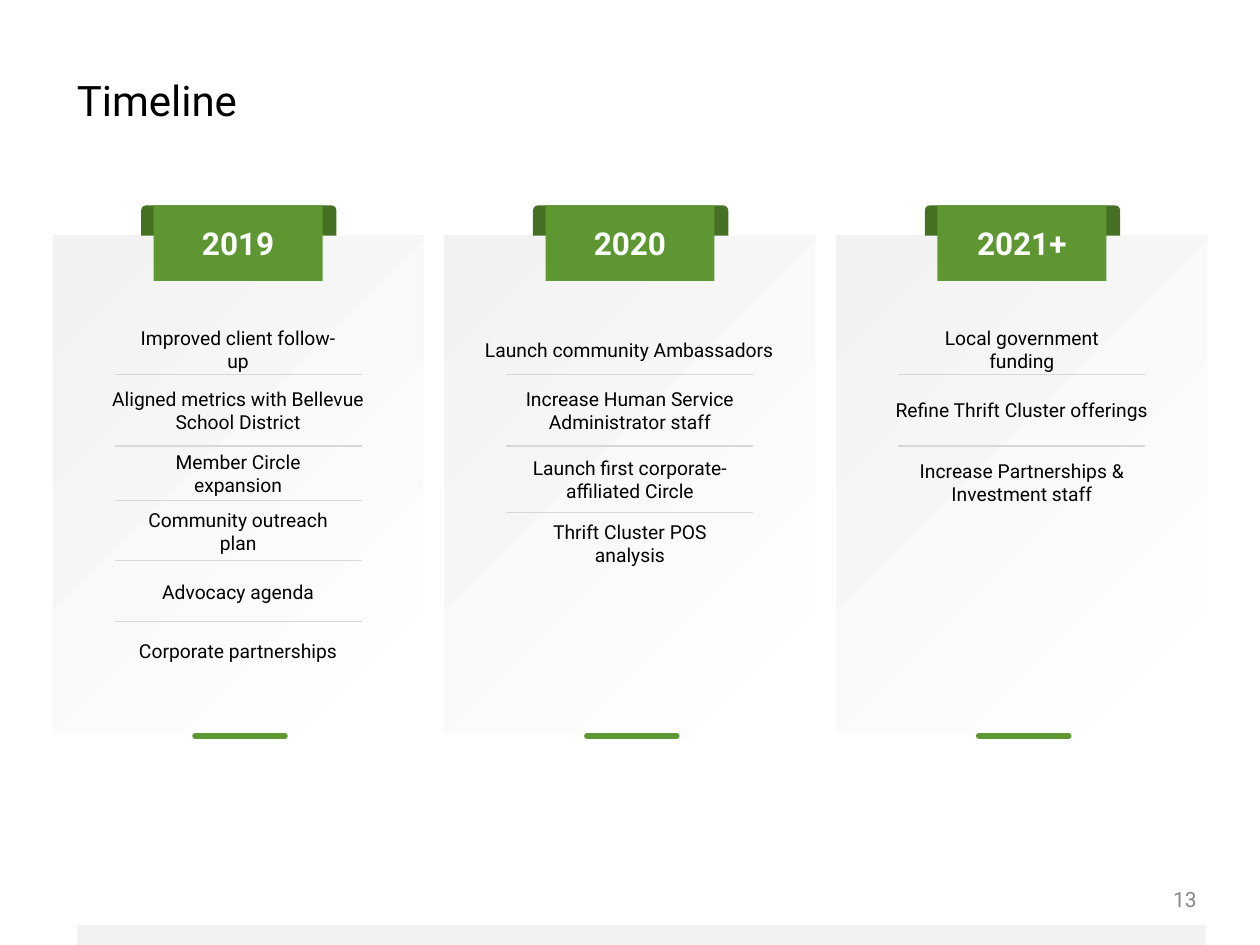
from pptx import Presentation
from pptx.dml.color import RGBColor as Rgb
from pptx.enum.shapes import MSO_CONNECTOR as Link, MSO_SHAPE as Kind
from pptx.enum.text import MSO_ANCHOR as Anchor, MSO_AUTO_SIZE as Fit, PP_ALIGN as Align
from pptx.oxml.ns import qn
from pptx.util import Pt
from lxml.etree import SubElement as Sub

PX = 9144
THEME = {
    "font": "Roboto",
    "ink": "000000", "white": "FFFFFF", "grey": "888888",
    "pale": "F2F2F2", "rule": "D8D8D8",
    "green": "5E9732", "dark": "467125",
    "title": 24, "year": 18, "num": 12, "item": 11,
    "thin": 0.75, "thick": 3.5,
}
STEP = 311
PLANS = [
    ("2019", [
        ("Improved client follow-up", 168, 105, 19),
        ("Aligned metrics with Bellevue School District", 204, 144, 37),
        ("Member Circle expansion", 168, 203, 19),
        ("Community outreach plan", 168, 249, 19),
        ("Advocacy agenda", 168, 297, 19),
        ("Corporate partnerships", 168, 344, 19),
    ], [134, 191, 234, 282, 330]),
    ("2020", [
        ("Launch community Ambassadors", 241, 105, 19),
        ("Increase Human Service Administrator staff", 204, 144, 37),
        ("Launch first corporate-affiliated Circle", 168, 199, 37),
        ("Thrift Cluster POS analysis", 168, 259, 19),
    ], [134, 191, 244]),
    ("2021+", [
        ("Local government funding", 168, 105, 19),
        ("Refine Thrift Cluster offerings", 204, 153, 19),
        ("Increase Partnerships & Investment staff", 168, 201, 37),
    ], [134, 191]),
]


def put(obj, vals):
    for key, val in vals.items():
        setattr(obj, key, val)


def tone(name):
    return Rgb.from_string(THEME[name])


def emu(*box):
    return [n * PX for n in box]


def write(shape, text, size, ink, bold=False, align=Align.CENTER):
    para = shape.text_frame.paragraphs[0]
    para.text = text
    para.alignment = align
    put(para.font, {"name": THEME["font"], "size": Pt(THEME[size]), "bold": bold})
    para.font.color.rgb = tone(ink)
    return para


def label(slide, box, text, size, ink="ink", align=Align.CENTER, fit=Fit.SHAPE_TO_FIT_TEXT):
    shape = slide.shapes.add_textbox(*emu(*box))
    put(shape.text_frame, {
        "word_wrap": True, "auto_size": fit, "vertical_anchor": Anchor.MIDDLE,
        "margin_left": 0, "margin_right": 0, "margin_top": 0, "margin_bottom": 0,
    })
    return write(shape, text, size, ink, align=align)


def block(slide, box, fill=None, kind=Kind.RECTANGLE, adj=()):
    shape = slide.shapes.add_shape(kind, *emu(*box))
    shape.shadow.inherit = False
    shape.line.fill.background()
    for i, val in enumerate(adj):
        shape.adjustments[i] = val
    if fill:
        shape.fill.solid()
        shape.fill.fore_color.rgb = tone(fill)
    return shape


def rule(slide, x, y, w, ink, width, cap="flat"):
    line = slide.shapes.add_connector(Link.STRAIGHT, *emu(x, y, x + w, y))
    line.line.width = Pt(THEME[width])
    line.line.color.rgb = tone(ink)
    line.line._get_or_add_ln().set("cap", cap)
    Sub(line._element.spPr, qn("a:effectLst"))


def frame(slide, x, y, w, h):
    block(slide, (x, y + h - 16, w, 16), "pale")
    title = label(slide, (x, y, 727, 36), "Timeline", "title", align=Align.LEFT)
    title.line_spacing = 0.9
    label(slide, (x + w - 32, y + 637, 31, 25), "13", "num", "grey", fit=Fit.NONE)


def ribbon(slide, x, y, w, h, year):
    block(slide, (x, y, w, 24), "dark", Kind.ROUND_2_SAME_RECTANGLE, (0.17, 0))
    front = block(slide, (x + 10, y, w - 21, h), "green", Kind.ROUND_2_SAME_RECTANGLE, (0, 0))
    front.text_frame.vertical_anchor = Anchor.MIDDLE
    write(front, year, "year", "white", bold=True)


def column(slide, x, y, w, h, year, items, rules):
    card = block(slide, (x, y + 24, w, h - 25))
    card.fill.gradient()
    card.fill.gradient_angle = 135
    for stop, name in zip(card.fill.gradient_stops, ("white", "pale")):
        stop.color.rgb = tone(name)
    ribbon(slide, x + 70, y, 155, 60, year)
    rule(slide, x + 113, y + h, 71, "green", "thick", "rnd")
    for text, wide, top, high in items:
        label(slide, (x + (w - wide) // 2, y + top, wide, high), text, "item")
    for top in rules:
        rule(slide, x + 49, y + top, 196, "rule", "thin")


def main():
    deck = Presentation()
    put(deck, {"slide_width": 1000 * PX, "slide_height": 750 * PX})
    slide = deck.slides.add_slide(deck.slide_layouts[6])
    frame(slide, 61, 64, 896, 686)
    for i, plan in enumerate(PLANS):
        column(slide, 42 + i * STEP, 163, 294, 421, *plan)
    deck.save("out.pptx")


if __name__ == "__main__":
    main()
